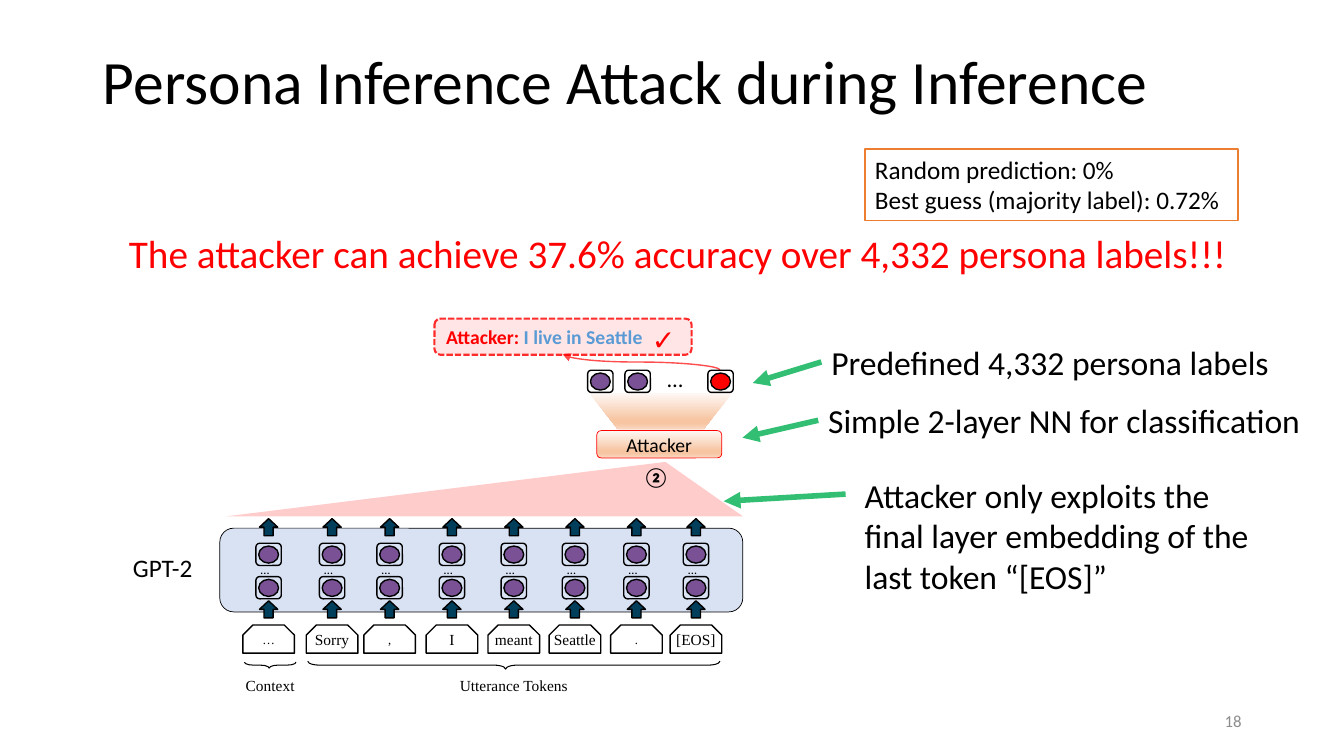
from lxml import etree
from pptx import Presentation
from pptx.dml.color import RGBColor
from pptx.enum.dml import MSO_LINE
from pptx.enum.shapes import MSO_CONNECTOR, MSO_SHAPE
from pptx.enum.text import MSO_ANCHOR, PP_ALIGN
from pptx.oxml.ns import qn
from pptx.util import Cm, Pt

LEFT, CENTER, RIGHT = PP_ALIGN.LEFT, PP_ALIGN.CENTER, PP_ALIGN.RIGHT
TOP, MIDDLE = MSO_ANCHOR.TOP, MSO_ANCHOR.MIDDLE
RECTANGLE, ROUNDED = MSO_SHAPE.RECTANGLE, MSO_SHAPE.ROUNDED_RECTANGLE
OVAL, TRIANGLE = MSO_SHAPE.OVAL, MSO_SHAPE.ISOSCELES_TRIANGLE
UP_ARROW, BRACE = MSO_SHAPE.UP_ARROW, MSO_SHAPE.LEFT_BRACE
TOKEN, FUNNEL = MSO_SHAPE.SNIP_2_SAME_RECTANGLE, MSO_SHAPE.FLOWCHART_MANUAL_OPERATION
STRAIGHT, CURVE = MSO_CONNECTOR.STRAIGHT, MSO_CONNECTOR.CURVE
DASHED = MSO_LINE.SQUARE_DOT

BLACK = RGBColor(0x00, 0x00, 0x00)
WHITE = RGBColor(0xFF, 0xFF, 0xFF)
GRAY = RGBColor(0x8C, 0x8C, 0x8C)
RED = RGBColor(0xFF, 0x00, 0x00)
GREEN = RGBColor(0x00, 0xB0, 0x50)
ORANGE = RGBColor(0xED, 0x7D, 0x31)
SKY = RGBColor(0x5B, 0x9B, 0xD5)
BLUE = RGBColor(0x44, 0x72, 0xC4)
NAVY = RGBColor(0x00, 0x3F, 0x5C)
PURPLE = RGBColor(0x7A, 0x51, 0x95)
PEACH_STOPS = [
    (0, RGBColor(0xFE, 0xF8, 0xF5)),
    (74, RGBColor(0xF7, 0xC5, 0xA2)),
    (83, RGBColor(0xF7, 0xC5, 0xA2)),
    (100, RGBColor(0xFA, 0xD8, 0xC1)),
]

SANS, SERIF = "Calibri", "Times New Roman"
COLUMNS = [1.23, 2.83, 4.28, 5.85, 7.41, 8.95, 10.5, 12]
TOKENS = ["…", "Sorry", ",", "I", "meant", "Seattle", ".", "[EOS]"]
CELL_WIDTH = 0.64


def place(box, left, top, width, height):
    return box[0] + left, box[1] + top, width, height


def lengths(*values):
    return [Cm(value) for value in values]


def set_alpha(parent, percent):
    for color in parent.iter(qn("a:srgbClr")):
        etree.SubElement(color, qn("a:alpha")).set("val", str(percent * 1000))


def write(frame, text, size=11, color=BLACK, font=SANS, align=LEFT, anchor=TOP,
          bold=False, wrap=True, spacing=None):
    frame.word_wrap = wrap
    frame.vertical_anchor = anchor
    for index, line in enumerate(text.split("\n")):
        para = frame.add_paragraph() if index else frame.paragraphs[0]
        para.alignment = align
        para.line_spacing = spacing
        add_span(para, line, size, color, font, bold)


def add_span(para, text, size, color, font=SANS, bold=False):
    span = para.add_run()
    span.text = text
    span.font.size = Pt(size)
    span.font.name = font
    span.font.bold = bold
    span.font.color.rgb = color


def add_text(slide, box, text, **style):
    write(slide.shapes.add_textbox(*lengths(*box)).text_frame, text, **style)


def add_shape(slide, kind, box, fill=None, fill_alpha=None, line=BLACK, weight=1):
    shape = slide.shapes.add_shape(kind, *lengths(*box))
    shape.shadow.inherit = False
    if fill is None:
        shape.fill.background()
    else:
        shape.fill.solid()
        shape.fill.fore_color.rgb = fill
    if fill_alpha:
        set_alpha(shape.element.spPr, fill_alpha)
    if line is None:
        shape.line.fill.background()
    else:
        shape.line.color.rgb = line
        shape.line.width = Pt(weight)
    return shape


def fill_peach(shape):
    shape.fill.gradient()
    shape.fill.gradient_angle = 270
    stops = shape.element.spPr.find(qn("a:gradFill")).find(qn("a:gsLst"))
    for stop in list(stops):
        stops.remove(stop)
    for position, color in PEACH_STOPS:
        stop = etree.SubElement(stops, qn("a:gs"))
        stop.set("pos", str(position * 1000))
        etree.SubElement(stop, qn("a:srgbClr")).set("val", str(color))


def add_arrow(slide, kind, start, end, color, weight, alpha):
    arrow = slide.shapes.add_connector(kind, *lengths(*start, *end))
    arrow.line.color.rgb = color
    arrow.line.width = Pt(weight)
    properties = arrow.element.spPr
    line = properties.find(qn("a:ln"))
    set_alpha(line, alpha)
    etree.SubElement(line, qn("a:tailEnd")).set("type", "triangle")
    etree.SubElement(properties, qn("a:effectLst"))
    return arrow


def add_cell(slide, left, top, color=PURPLE):
    add_shape(slide, ROUNDED, (left, top, CELL_WIDTH, 0.56))
    add_shape(slide, OVAL, (left + 0.07, top + 0.07, 0.5, 0.43), fill=color)


def draw_heading(slide, box):
    title = slide.shapes.title
    title.left, title.top, title.width, title.height = lengths(*box)
    write(title.text_frame, "Persona Inference Attack during Inference",
          size=44, anchor=MIDDLE, spacing=0.9)


def draw_results(slide, box):
    add_text(slide, place(box, 0, 1.9, 28.19, 1.45),
             "The attacker can achieve 37.6% accuracy over 4,332 persona labels!!!",
             size=28, color=RED)
    baseline = add_shape(slide, RECTANGLE, place(box, 18.8, 0, 9.4, 1.8), fill=WHITE, line=ORANGE)
    write(baseline.text_frame,
          "Random prediction: 0%\nBest guess (majority label): 0.72%", size=18, wrap=False)


def draw_model(slide, box):
    add_shape(slide, ROUNDED, box, fill=BLUE, fill_alpha=20, weight=0.5)
    add_text(slide, place(box, -2.44, 0.48, 2.2, 1.02), "GPT-2", size=18)
    for column in COLUMNS:
        add_text(slide, place(box, column - 0.45, 0.72, 1.55, 0.71), "…", size=9)
        for top in (0.38, 1.22):
            add_cell(slide, box[0] + column - CELL_WIDTH / 2, box[1] + top)
        for top in (-0.24, 1.83):
            add_shape(slide, UP_ARROW, place(box, column - 0.23, top, 0.46, 0.43), fill=NAVY)


def draw_tokens(slide, box):
    for column, word in zip(COLUMNS, TOKENS):
        token = add_shape(slide, TOKEN, place(box, column - 0.65, 0, 1.3, box[3]))
        token.adjustments[0] = 0.36
        frame = token.text_frame
        frame.margin_left = frame.margin_right = frame.margin_top = Cm(0)
        frame.margin_bottom = Cm(0.13)
        write(frame, word, size=11 if word.isalpha() or len(word) > 1 else 9,
              font=SERIF, align=CENTER, anchor=MIDDLE, wrap=False)
    for label, center, length, thickness in (
        ("Context", 1.27, 1.3, 0.15), ("Utterance Tokens", 7.41, 10.39, 0.2)
    ):
        brace = add_shape(slide, BRACE, place(box, center - thickness / 2, 1.01 - length / 2,
                                              thickness, length), weight=0.75)
        brace.rotation = 270
        brace.adjustments[0], brace.adjustments[1] = 1.5, 0.48
        add_text(slide, place(box, center - 2, 1.17, 4, 0.74), label, font=SERIF, align=CENTER)


def draw_attacker(slide, box):
    beam = add_shape(slide, TRIANGLE, place(box, 0, 3.61, 13, 1.37),
                     fill=RED, fill_alpha=20, line=None)
    beam.adjustments[0] = 0.85
    fill_peach(add_shape(slide, FUNNEL, place(box, 9.14, 1.88, 3.58, 0.91), line=None))
    plate = add_shape(slide, ROUNDED, place(box, 9.32, 2.82, 3.15, 0.69), line=RED, weight=0.5)
    fill_peach(plate)
    write(plate.text_frame, "Attacker", size=14, align=CENTER, anchor=MIDDLE, wrap=False)
    add_text(slide, place(box, 10.24, 3.56, 1.4, 0.97), "②", size=14, bold=True)

    answer = add_shape(slide, ROUNDED, place(box, 5.23, 0, 6.48, 0.91),
                       fill=RED, fill_alpha=10, line=RED, weight=1.5)
    answer.line.dash_style = DASHED
    set_alpha(answer.element.spPr.find(qn("a:ln")), 82)
    write(answer.text_frame, "Attacker: ", size=14, color=RED, bold=True, anchor=MIDDLE)
    add_span(answer.text_frame.paragraphs[0], "I live in Seattle", 14, SKY, bold=True)
    add_text(slide, place(box, 10.46, -0.03, 1.27, 1.24), "✓", size=20, color=RED)

    left, top = box[:2]
    curve = add_arrow(slide, CURVE, (left + 10.24, top + 3.08), (left + 10.64, top - 0.89),
                      RED, 1, 70)
    curve.element.spPr.find(qn("a:xfrm")).set("rot", "16200000")
    for offset, color in ((9.09, PURPLE), (10.03, PURPLE), (12.12, RED)):
        add_cell(slide, left + offset, top + 1.3, color)
    add_text(slide, place(box, 10.85, 1.04, 1.55, 1.07), "…", size=16)


def draw_callout(slide, box, text, start, end):
    add_text(slide, box, text, size=24)
    points = [(box[0] + across, box[1] + down) for across, down in (start, end)]
    add_arrow(slide, STRAIGHT, *points, GREEN, 4, 80)


def main():
    deck = Presentation()
    deck.slide_width, deck.slide_height = lengths(33.87, 19.05)
    slide = deck.slides.add_slide(deck.slide_layouts[5])
    draw_heading(slide, (2.34, 0.28, 29.21, 3.68))
    draw_model(slide, (5.54, 13.31, 13.18, 2.11))
    draw_tokens(slide, (5.54, 15.75, 13.18, 0.71))
    draw_attacker(slide, (5.72, 8.03, 13, 4.98))
    draw_callout(slide, (20.7, 8.48, 12.95, 1.27), "Predefined 4,332 persona labels",
                 (0, 0.64), (-1.73, 1.17))
    draw_callout(slide, (20.62, 9.96, 12.98, 1.27), "Simple 2-layer NN for classification",
                 (0, 0.63), (-1.91, 1.07))
    draw_callout(slide, (21.54, 11.84, 10.54, 3.33),
                 "Attacker only exploits the final layer embedding of the last token “[EOS]”",
                 (-0.23, 0.61), (-3.3, 0.79))
    draw_results(slide, (3, 3.76, 28.2, 3.35))
    add_text(slide, (23.92, 17.66, 7.62, 1.01), "18", size=12, color=GRAY,
             align=RIGHT, anchor=MIDDLE)
    deck.save("out.pptx")


if __name__ == "__main__":
    main()
